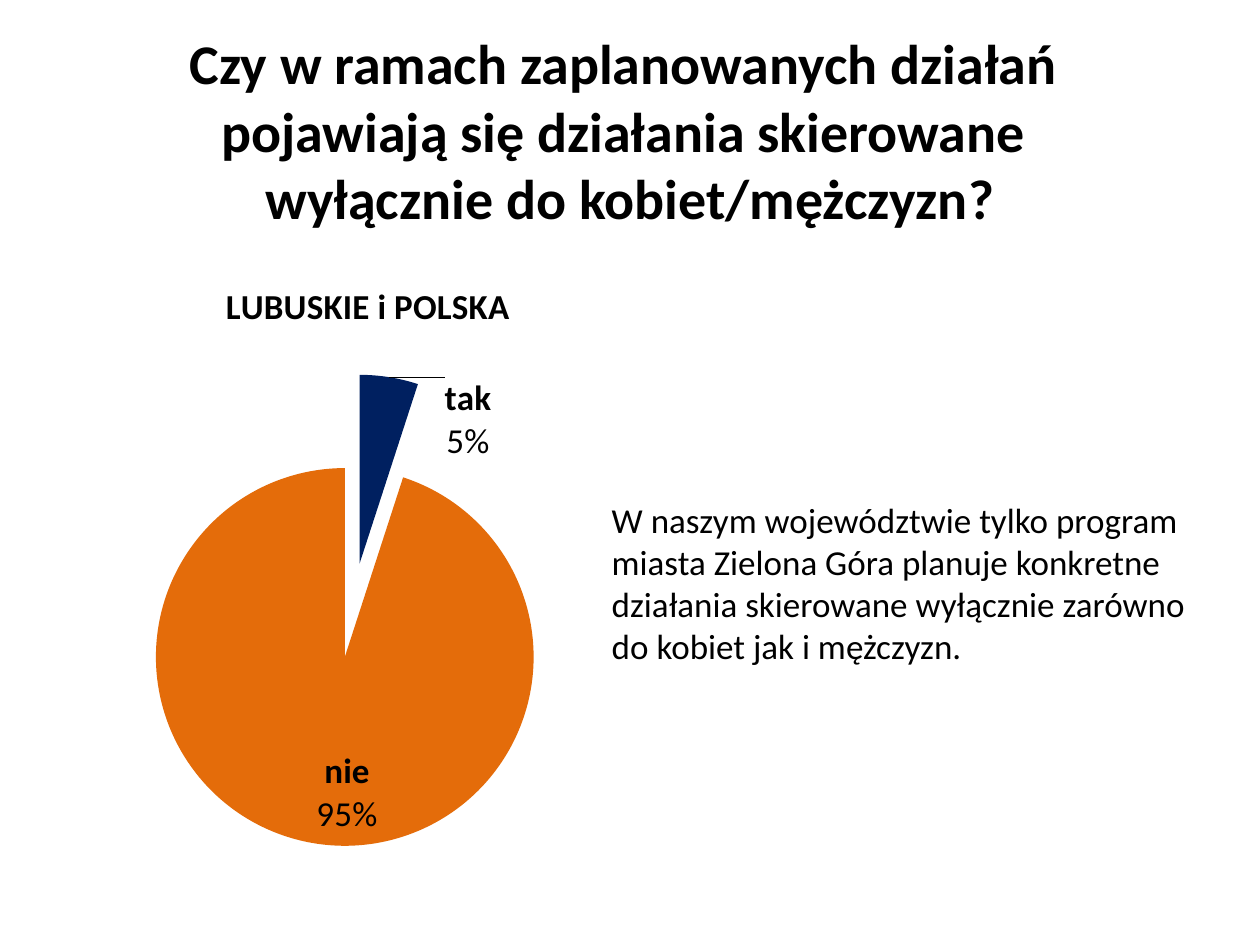
from lxml import etree
from pptx import Presentation
from pptx.chart.data import CategoryChartData
from pptx.dml.color import RGBColor
from pptx.enum import chart as ch, text as tx
from pptx.oxml.ns import qn
from pptx.util import Pt

FONT = "Calibri"
BLACK = "000000"
SLICES = [("tak", 5, "002060"), ("nie", 95, "E46C0A")]


def color(hex_code):
    return RGBColor.from_string(hex_code)


def style(font, size, bold=False):
    for name, value in {"name": FONT, "size": Pt(size), "bold": bold}.items():
        setattr(font, name, value)
    font.color.rgb = color(BLACK)


def add_text(s, box, lines, size, bold=False, align=tx.PP_ALIGN.LEFT):
    tf = s.shapes.add_textbox(*map(Pt, box)).text_frame
    tf.word_wrap = True
    for i, line in enumerate(lines):
        p = tf.add_paragraph() if i else tf.paragraphs[0]
        p.alignment = align
        r = p.add_run()
        r.text = line
        style(r.font, size, bold)


def set_layout(before, **values):
    """Put a manual layout right after the given chart element."""
    layout = etree.Element(qn("c:layout"))
    manual = etree.SubElement(layout, qn("c:manualLayout"))
    for tag, value in values.items():
        etree.SubElement(manual, qn("c:" + tag)).set("val", str(value))
    before.addnext(layout)


def add_chart_title(chart, title):
    tf = chart.chart_title.text_frame
    r = tf.paragraphs[0].add_run()
    r.text = title
    style(r.font, 20, True)
    for old in chart.chart_title._element.findall(qn("c:layout")):
        chart.chart_title._element.remove(old)
    set_layout(chart.chart_title._element.find(qn("c:tx")),
               xMode="edge", yMode="edge", x=0.28, y=0.03)


def add_slice_label(point, name, value, position):
    label = point.data_label
    tf = label.text_frame
    for p, content, bold in ((tf.paragraphs[0], name, True),
                             (tf.add_paragraph(), f"{value}%", False)):
        r = p.add_run()
        r.text = content
        style(r.font, 20, bold)
    label.position = position


def add_pie(s, box, title):
    data = CategoryChartData()
    data.categories = [name for name, _, _ in SLICES]
    data.add_series("Series 1", [value for _, value, _ in SLICES])
    chart = s.shapes.add_chart(ch.XL_CHART_TYPE.PIE, *map(Pt, box), data).chart
    style(chart.font, 10)
    chart.has_legend = False
    add_chart_title(chart, title)

    area = chart._chartSpace.chart.plotArea
    for old in area.findall(qn("c:layout")):
        area.remove(old)
    anchor = etree.Element(qn("c:layout"))
    area.insert(0, anchor)
    set_layout(anchor, layoutTarget="inner", xMode="edge", yMode="edge",
               x=0.12, y=0.18, w=0.71, h=0.71)
    area.remove(anchor)

    plot = chart.plots[0]
    plot.vary_by_categories = True
    series = plot.series[0]
    labels = series.data_labels
    style(labels.font, 20)
    labels.show_category_name = labels.show_percentage = True
    labels.show_value = False
    positions = (ch.XL_LABEL_POSITION.OUTSIDE_END, ch.XL_LABEL_POSITION.INSIDE_END)
    for i, ((name, value, fill), position) in enumerate(zip(SLICES, positions)):
        point = series.points[i]
        point.format.fill.solid()
        point.format.fill.fore_color.rgb = color(fill)
        add_slice_label(point, name, value, position)
    first_label = labels._element.find(qn("c:dLbl"))
    set_layout(first_label.find(qn("c:idx")), x=0.08, y=0.14)

    explosion = etree.Element(qn("c:explosion"))
    explosion.set("val", "25")
    series._element.find(qn("c:dPt")).addprevious(explosion)
    for dpt in series._element.findall(qn("c:dPt")):
        own = etree.Element(qn("c:explosion"))
        own.set("val", "25")
        dpt.find(qn("c:spPr")).addprevious(own)


def main():
    prs = Presentation()
    prs.slide_width, prs.slide_height = Pt(720), Pt(540)
    s = prs.slides.add_slide(prs.slide_layouts[6])
    add_text(s, (0, 13, 720, 124),
             ["Czy w ramach zaplanowanych działań ",
              "pojawiają się działania skierowane ",
              "wyłącznie do kobiet/mężczyzn?"],
             32, True, tx.PP_ALIGN.CENTER)
    add_pie(s, (16.5, 145.5, 389, 380), "LUBUSKIE i POLSKA")
    add_text(s, (342.5, 281.5, 363, 104.5),
             ["W naszym województwie tylko program miasta Zielona Góra planuje "
              "konkretne działania skierowane wyłącznie zarówno do kobiet jak "
              "i mężczyzn."], 20)
    prs.save("out.pptx")


if __name__ == "__main__":
    main()
